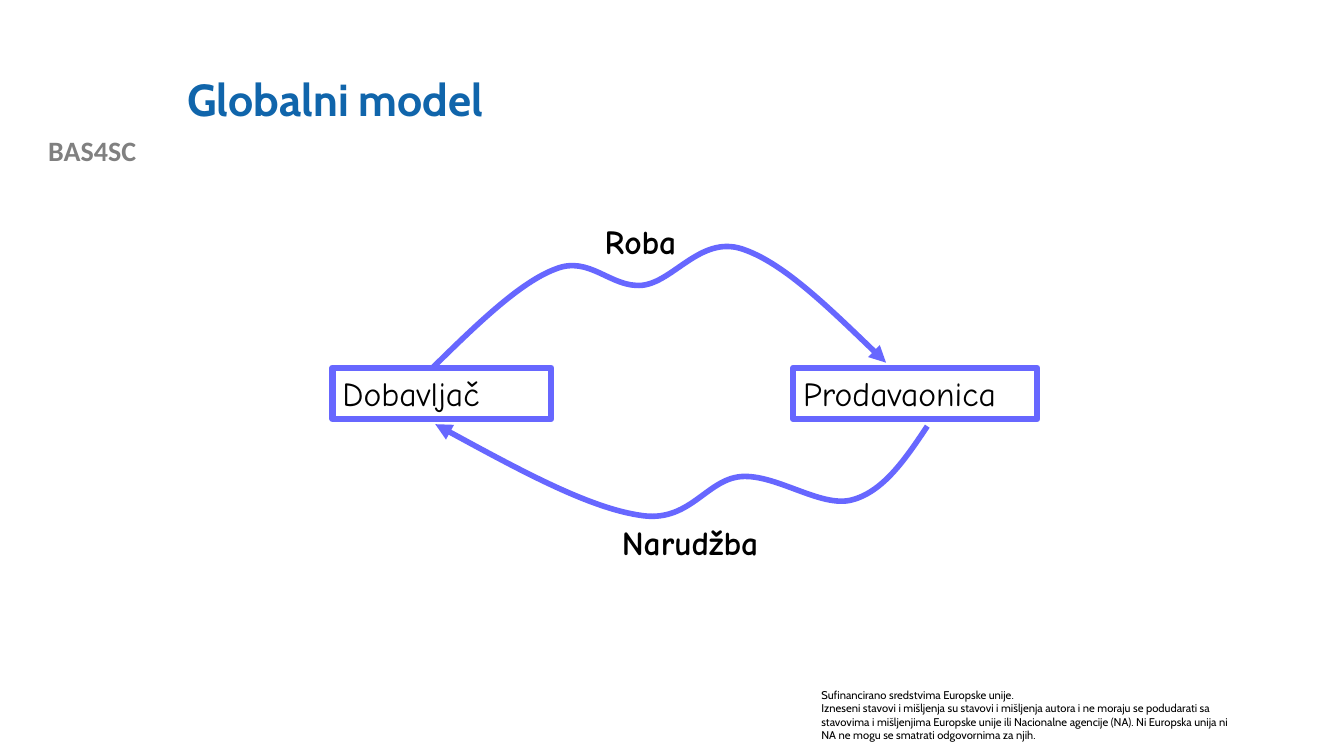
from lxml import etree
from pptx import Presentation
from pptx import util as u
from pptx.dml.color import RGBColor
from pptx.enum import shapes, text
from pptx.oxml.ns import qn

HUES = {"title": "1065AB", "tag": "808080", "ink": "000000", "line": "6767FF"}
HAND = "Comic Neue"


def write(para, words, font, size, hue, bold=False):
    run = para.add_run()
    run.text = words
    run.font.name = font
    run.font.size = u.Pt(size)
    run.font.bold = bold
    run.font.color.rgb = RGBColor.from_string(HUES[hue])


def outline(shape, width):
    shape.shadow.inherit = False
    shape.fill.background()
    shape.line.color.rgb = RGBColor.from_string(HUES["line"])
    shape.line.width = u.Pt(width)


deck = Presentation()
deck.slide_width, deck.slide_height = u.Cm(33.87), u.Cm(19.05)
slide = deck.slides.add_slide(deck.slide_layouts[5])
parts = slide.shapes

# Title
title = parts.title
title.left, title.top = u.Cm(4.47), u.Cm(1.02)
title.width, title.height = u.Cm(27.08), u.Cm(3.1)
title.text_frame.vertical_anchor = text.MSO_ANCHOR.MIDDLE
para = title.text_frame.paragraphs[0]
para.alignment = text.PP_ALIGN.LEFT
para.line_spacing = 0.9
write(para, "Globalni model", "Cabin", 32, "title", True)

# Project tag
tag = parts.add_textbox(u.Cm(0), u.Cm(3.25), u.Cm(4.65), u.Cm(1.09))
tag.text_frame.word_wrap = True
para = tag.text_frame.paragraphs[0]
para.alignment = text.PP_ALIGN.CENTER
write(para, "BAS4SC", "Calibri", 20, "tag", True)

# Funding note
note = parts.add_textbox(u.Cm(20.45), u.Cm(17.22), u.Cm(11.1), u.Cm(1.63))
note.text_frame.word_wrap = True
write(note.text_frame.paragraphs[0], "Sufinancirano sredstvima Europske unije.",
      "Cabin", 8, "ink")
write(note.text_frame.add_paragraph(),
      "Izneseni stavovi i mišljenja su stavovi i mišljenja autora i ne moraju se "
      "podudarati sa stavovima i mišljenjima Europske unije ili Nacionalne agencije "
      "(NA). Ni Europska unija ni NA ne mogu se smatrati odgovornima za njih.",
      "Cabin", 8, "ink")

# Supplier and shop
for name, left, width in [("Dobavljač", 8.38, 5.51), ("Prodavaonica", 19.99, 6.15)]:
    box = parts.add_shape(shapes.MSO_SHAPE.RECTANGLE,
                          u.Cm(left), u.Cm(9.27), u.Cm(width), u.Cm(1.29))
    outline(box, 4.5)
    para = box.text_frame.paragraphs[0]
    para.alignment = text.PP_ALIGN.LEFT
    write(para, name, HAND, 24, "ink")

# Flow curves: a start, then three Bezier points per piece
goods = [(10.92, 9.25),
         (12.01, 8.18), (13.11, 7.11), (14, 6.78),
         (14.86, 6.43), (15.39, 7.26), (16.18, 7.19),
         (16.97, 7.11), (17.65, 5.94), (18.69, 6.27),
         (19.71, 6.6), (21.01, 7.87), (22.33, 9.14)]
order = [(23.37, 10.74),
         (22.81, 11.58), (22.25, 12.4), (21.46, 12.6),
         (20.68, 12.8), (19.56, 11.94), (18.67, 12.01),
         (17.78, 12.09), (17.37, 13.21), (16.1, 12.98),
         (14.81, 12.78), (12.88, 11.73), (10.97, 10.69)]
for flow in (goods, order):
    spots = [(u.Cm(x), u.Cm(y)) for x, y in flow]
    pen = parts.build_freeform(*spots[0])
    pen.add_line_segments(spots[1:], close=False)
    curve = pen.convert_to_shape()
    outline(curve, 4)

    # Join each three straight steps into one cubic piece
    steps = list(curve._element.iter(qn("a:lnTo")))
    for i in range(0, len(steps), 3):
        cubic = etree.Element(qn("a:cubicBezTo"))
        steps[i].addprevious(cubic)
        for step in steps[i:i + 3]:
            cubic.append(step[0])
            step.getparent().remove(step)
    etree.SubElement(curve.line._get_or_add_ln(), qn("a:tailEnd"), type="triangle")

# Flow names
for name, left, top, width in [("Roba", 14.99, 5.44, 2.92),
                               ("Narudžba", 15.42, 13.03, 4.5)]:
    label = parts.add_textbox(u.Cm(left), u.Cm(top), u.Cm(width), u.Cm(1.3))
    label.text_frame.word_wrap = False
    write(label.text_frame.paragraphs[0], name, HAND, 24, "ink", True)

deck.save("out.pptx")
